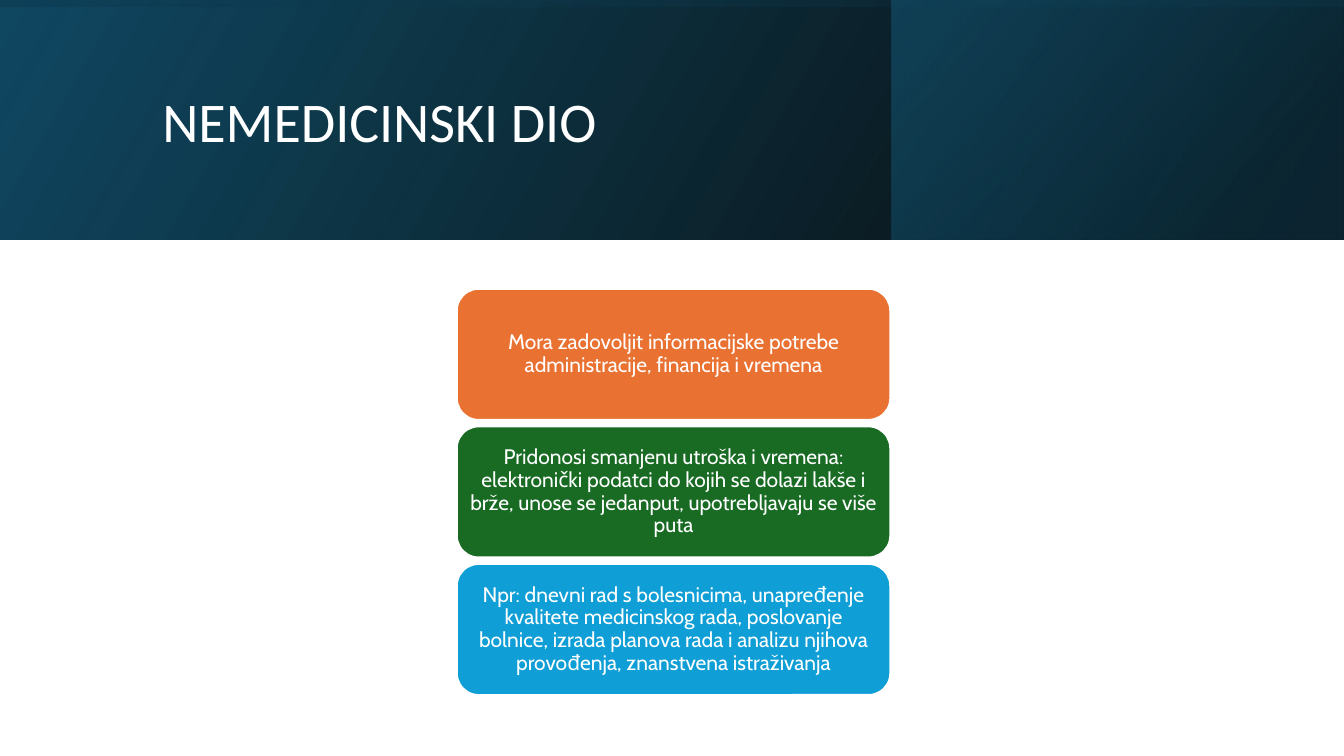
import dataclasses

import lxml.etree
import pptx
import pptx.dml.color
import pptx.enum.shapes
import pptx.enum.text
import pptx.oxml.ns
import pptx.slide
import pptx.text.text
import pptx.util

PX = 9525  # EMU per px, 96 px to the inch
WIDE, HIGH, HEAD = 1280, 720, 228
COLORS = {
    "white": "FFFFFF", "black": "000000", "blue": "104862",
    "navy": "0B3041", "teal": "156082",
    "orange": "E97132", "green": "196B24", "sky": "0F9ED5",
}


@dataclasses.dataclass
class Stop:
    pos: float
    color: str
    alpha: int  # percent


@dataclasses.dataclass
class Band:
    box: tuple[int, int, int, int]
    angle: int  # counter-clockwise
    stops: tuple[Stop, Stop]
    turn: int = 0


@dataclasses.dataclass
class Card:
    color: str
    text: str


BANDS = [
    Band((0, 0, WIDE, HEAD), 30, (Stop(0, "black", 96), Stop(1, "blue", 100))),
    Band((849, 0, 430, HEAD), 40, (Stop(0.19, "navy", 68), Stop(1, "teal", 48))),
    Band(((WIDE - HEAD) // 2, (HEAD - WIDE) // 2, HEAD, WIDE), 10,
         (Stop(0.23, "blue", 16), Stop(0.99, "black", 45)), 270),
]
CARDS = [
    Card("orange", "Mora zadovoljit informacijske potrebe administracije, "
                   "financija i vremena"),
    Card("green", "Pridonosi smanjenu utroška i vremena: elektronički podatci "
                  "do kojih se dolazi lakše i brže, unose se jedanput, "
                  "upotrebljavaju se više puta"),
    Card("sky", "Npr: dnevni rad s bolesnicima, unapređenje kvalitete "
                "medicinskog rada, poslovanje bolnice, izrada planova rada i "
                "analizu njihova provođenja, znanstvena istraživanja"),
]
LEFT, TOP, CARD_W, CARD_H, PITCH = 435, 275, 413, 125, 131

Shapes = pptx.enum.shapes.MSO_SHAPE
Align = pptx.enum.text.PP_ALIGN


def rgb(name: str) -> pptx.dml.color.RGBColor:
    return pptx.dml.color.RGBColor.from_string(COLORS[name])


def write(frame: pptx.text.text.TextFrame, text: str, font: str, size: int,
          align: Align) -> None:
    frame.text = text
    frame.word_wrap = True
    frame.vertical_anchor = pptx.enum.text.MSO_ANCHOR.MIDDLE
    para = frame.paragraphs[0]
    para.alignment = align
    para.line_spacing = 0.9
    face = para.runs[0].font
    face.name, face.size = font, pptx.util.Pt(size)
    face.color.rgb = rgb("white")


def draw_band(slide: pptx.slide.Slide, band: Band) -> None:
    shape = slide.shapes.add_shape(Shapes.RECTANGLE, *(v * PX for v in band.box))
    shape.shadow.inherit = False
    shape.line.fill.background()
    shape.rotation = band.turn
    shape._element.spPr.xfrm.set("flipH", "1")
    shape.fill.gradient()
    shape.fill.gradient_angle = band.angle
    for mark, stop in zip(shape.fill.gradient_stops, band.stops):
        mark.position = stop.pos
        mark.color.rgb = rgb(stop.color)
    # Opacity of each stop
    qn = pptx.oxml.ns.qn
    tints = list(shape._element.spPr.iter(qn("a:srgbClr")))
    for tint, stop in zip(tints, band.stops):
        alpha = lxml.etree.SubElement(tint, qn("a:alpha"))
        alpha.set("val", str(stop.alpha * 1000))


def draw_card(slide: pptx.slide.Slide, card: Card, row: int) -> None:
    box = (LEFT, TOP + row * PITCH, CARD_W, CARD_H)
    shape = slide.shapes.add_shape(Shapes.ROUNDED_RECTANGLE, *(v * PX for v in box))
    shape.shadow.inherit = False
    shape.fill.solid()
    shape.fill.fore_color.rgb = rgb(card.color)
    shape.line.color.rgb = rgb("white")
    shape.line.width = pptx.util.Pt(1.5)
    frame = shape.text_frame
    frame.margin_left = frame.margin_right = 6 * PX
    frame.margin_top = frame.margin_bottom = 3 * PX
    write(frame, card.text, "Cabin", 15, Align.CENTER)


def main() -> None:
    deck = pptx.Presentation()
    deck.slide_width, deck.slide_height = WIDE * PX, HIGH * PX
    slide = deck.slides.add_slide(deck.slide_layouts[5])

    # Header bands
    for band in BANDS:
        draw_band(slide, band)

    # Title, raised above the bands
    title = slide.shapes.title
    title.left, title.top, title.width, title.height = (
        v * PX for v in (145, 36, 1020, 165))
    write(title.text_frame, "NEMEDICINSKI DIO", "Calibri", 40, Align.LEFT)
    slide.shapes._spTree.append(title._element)

    # Stack of cards
    for row, card in enumerate(CARDS):
        draw_card(slide, card, row)

    deck.save("out.pptx")


if __name__ == "__main__":
    main()
